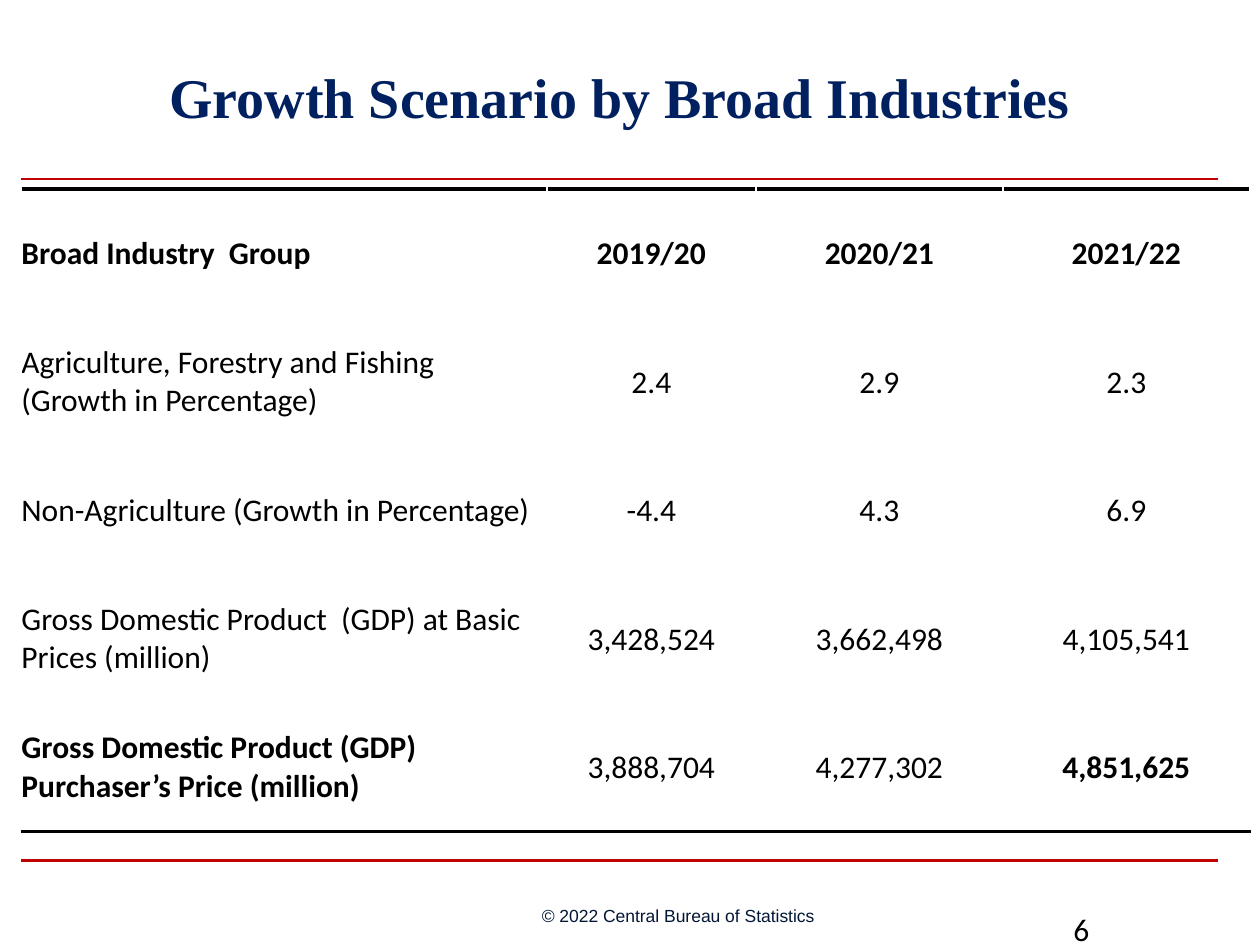
import dataclasses

import lxml.etree
import pptx
import pptx.dml.color
import pptx.enum.shapes
import pptx.enum.text
import pptx.oxml.ns
import pptx.util

WIDTH, HEIGHT = 10, 7.5
LEFT_EDGE = 0.17
INDUSTRY_COLUMNS = (4.17, 1.66, 1.96, 1.96)
ROW_HEIGHT = 1.02
ALIGN = pptx.enum.text.PP_ALIGN
ANCHOR = pptx.enum.text.MSO_ANCHOR

GROWTH_ROWS = (
    ("Broad Industry  Group", "2019/20", "2020/21", "2021/22"),
    ("Agriculture, Forestry and Fishing (Growth in Percentage)", "2.4", "2.9", "2.3"),
    ("Non-Agriculture (Growth in Percentage)", "-4.4", "4.3", "6.9"),
    ("Gross Domestic Product  (GDP) at Basic Prices (million)",
     "3,428,524", "3,662,498", "4,105,541"),
    ("Gross Domestic Product (GDP) Purchaser’s Price (million)",
     "3,888,704", "4,277,302", "4,851,625"),
)
LAST_ROW = len(GROWTH_ROWS) - 1
BOLD_CELLS = {(0, column) for column in range(4)} | {(LAST_ROW, 0), (LAST_ROW, 3)}


@dataclasses.dataclass(frozen=True)
class TextStyle:
    font: str
    size: int
    color: str
    bold: bool = False


@dataclasses.dataclass(frozen=True)
class Theme:
    paper: str = "FFFFFF"
    ink: str = "000000"
    rule: str = "C00000"
    rule_width: float = 1.5
    border_width: float = 2
    title: TextStyle = TextStyle("Times New Roman", 32, "002060", True)
    body: TextStyle = TextStyle("Calibri", 18, "000000")
    copyright: TextStyle = TextStyle("Arial", 10, "031735")


THEME = Theme()


def rgb(color):
    return pptx.dml.color.RGBColor.from_string(color)


def inches(*lengths):
    return [pptx.util.Inches(length) for length in lengths]


def write(paragraph, words, style, align=ALIGN.LEFT):
    paragraph.alignment = align
    run = paragraph.add_run()
    run.text = words
    run.font.name = style.font
    run.font.size = pptx.util.Pt(style.size)
    run.font.bold = style.bold
    run.font.color.rgb = rgb(style.color)


def add_label(slide, words, area, style, align=ALIGN.LEFT, anchor=ANCHOR.MIDDLE, inset=None):
    frame = slide.shapes.add_textbox(*inches(*area)).text_frame
    frame.word_wrap = True
    frame.vertical_anchor = anchor
    if inset is not None:
        frame.margin_left = frame.margin_right = pptx.util.Inches(inset)
        frame.margin_top = frame.margin_bottom = pptx.util.Inches(inset)
    write(frame.paragraphs[0], words, style, align)


def add_rule(slide, top):
    rule = slide.shapes.add_connector(
        pptx.enum.shapes.MSO_CONNECTOR.STRAIGHT,
        *inches(LEFT_EDGE, top, WIDTH - 0.33, top))
    rule.line.color.rgb = rgb(THEME.rule)
    rule.line.width = pptx.util.Pt(THEME.rule_width)
    lxml.etree.SubElement(rule._element.spPr, pptx.oxml.ns.qn("a:effectLst"))


def add_border(cell, side):
    qn = pptx.oxml.ns.qn
    border = lxml.etree.Element(qn(f"a:{side}"), w=str(pptx.util.Pt(THEME.border_width)))
    fill = lxml.etree.SubElement(border, qn("a:solidFill"))
    lxml.etree.SubElement(fill, qn("a:srgbClr"), val=THEME.ink)
    cell._tc.get_or_add_tcPr().insert(0, border)


def fill_cell(cell, words, row, column):
    is_label = column == 0
    side_inset = pptx.util.Inches(0 if is_label else 0.01)
    cell.margin_left = cell.margin_right = cell.margin_top = side_inset
    cell.margin_bottom = 0
    cell.vertical_anchor = ANCHOR.MIDDLE
    cell.fill.solid()
    cell.fill.fore_color.rgb = rgb(THEME.paper)
    style = dataclasses.replace(THEME.body, bold=(row, column) in BOLD_CELLS)
    write(cell.text_frame.paragraphs[0], words, style,
          ALIGN.LEFT if is_label else ALIGN.CENTER)
    if row == 0:
        add_border(cell, "lnT")
    if row == LAST_ROW:
        add_border(cell, "lnB")


def add_growth_table(slide):
    area = inches(LEFT_EDGE, HEIGHT * 0.2, sum(INDUSTRY_COLUMNS),
                  ROW_HEIGHT * len(GROWTH_ROWS))
    growth = slide.shapes.add_table(len(GROWTH_ROWS), len(INDUSTRY_COLUMNS), *area).table
    growth.first_row = growth.horz_banding = False
    for column, width in zip(growth.columns, INDUSTRY_COLUMNS):
        column.width = pptx.util.Inches(width)
    for row, entries in enumerate(GROWTH_ROWS):
        growth.rows[row].height = pptx.util.Inches(ROW_HEIGHT)
        for column, words in enumerate(entries):
            fill_cell(growth.cell(row, column), words, row, column)


def main():
    deck = pptx.Presentation()
    deck.slide_width, deck.slide_height = inches(WIDTH, HEIGHT)
    slide = deck.slides.add_slide(deck.slide_layouts[6])
    for top in (1.42, 6.83):
        add_rule(slide, top)
    add_label(slide, "© 2022 Central Bureau of Statistics",
              (4.3, 7.17, 2.2, 0.19), THEME.copyright, inset=0)
    add_label(slide, "Growth Scenario by Broad Industries",
              (0.42, 0.25, 9, 1.03), THEME.title, ALIGN.CENTER)
    add_growth_table(slide)
    add_label(slide, "6", (8.42, 7.17, 1.33, 0.23), THEME.body, anchor=ANCHOR.TOP)
    deck.save("out.pptx")


if __name__ == "__main__":
    main()
